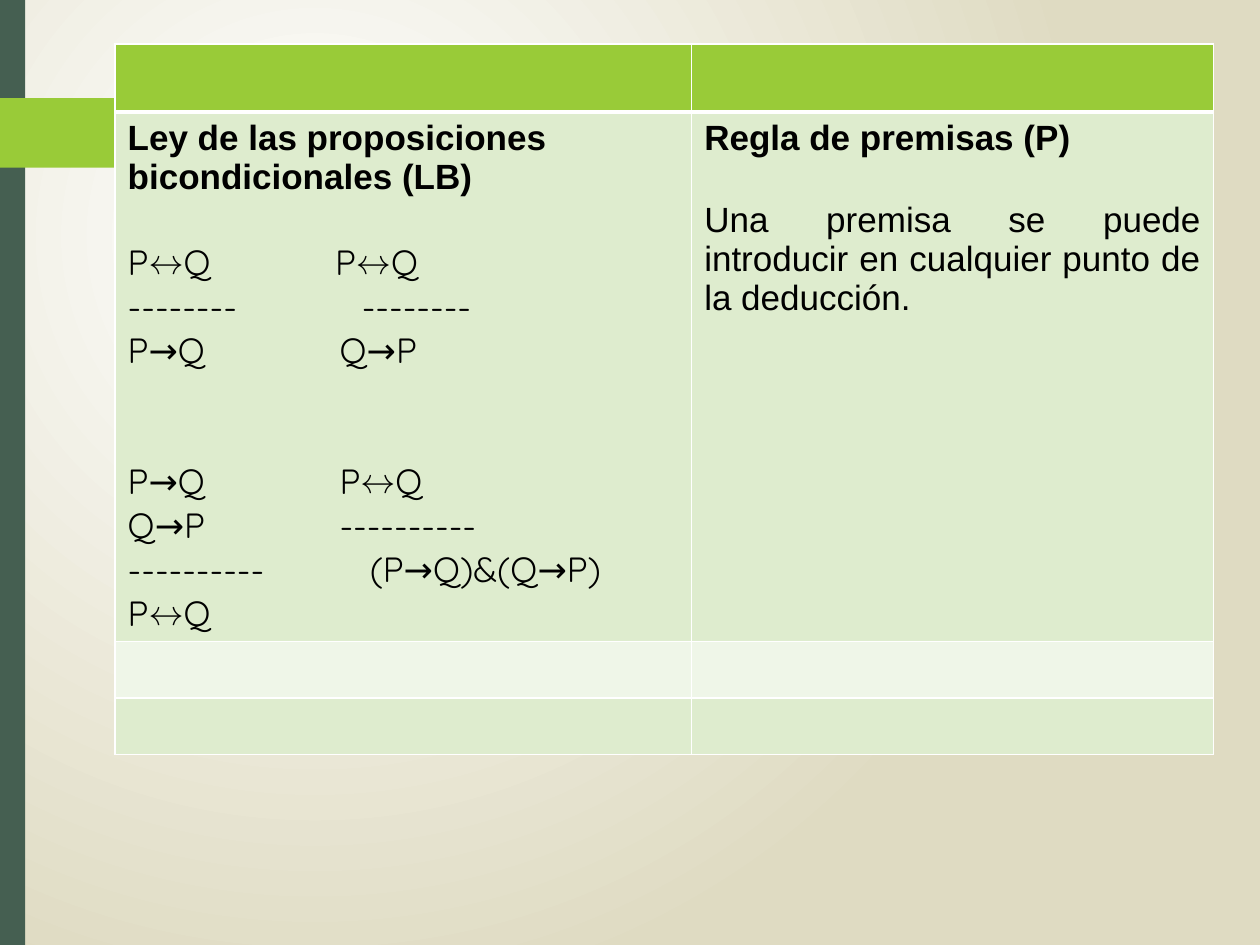
from lxml import etree
from pptx import Presentation
from pptx import util as u
from pptx.dml.color import RGBColor
from pptx.enum import shapes, text
from pptx.oxml import ns

COLORS = {
    "bar": "455F51",
    "accent": "99CB38",
    "band": "DEECCE",
    "light": "EFF6E8",
    "line": "FFFFFF",
    "text": "000000",
    "bg_center": "FFFFFF",
    "bg_edge": "DFDBC2",
}
ROW_FILLS = ["accent", "band", "light", "band"]
ROW_HEIGHTS = [1.37, 10.67, 1.14, 1.14]
COLUMN_SHARES = [0.525, 0.475]
BLANK_LINE = 25

RULES = [
    ("P↔Q\tP↔Q", 4.18, BLANK_LINE),
    ("--------\t--------", 4.72, 0),
    ("P→Q\tQ→P", 4.27, 0),
    ("P→Q\tP↔Q", 4.27, 2 * BLANK_LINE),
    ("Q→P\t----------", 4.27, 0),
    ("----------\t(P→Q)&(Q→P)", 4.88, 0),
    ("P↔Q", None, 0),
]


def rgb(name):
    return RGBColor.from_string(COLORS[name])


def add_xml(parent, tag, **attrs):
    return etree.SubElement(parent, ns.qn(tag), **attrs)


def add_text(tf, content, font="Arial", size=20, bold=False, before=0,
             align=text.PP_ALIGN.LEFT, tab=None):
    p = tf.paragraphs[0] if not tf.text else tf.add_paragraph()
    p.alignment = align
    p.space_before = u.Pt(before)
    if tab:
        tabs = add_xml(p._p.get_or_add_pPr(), "a:tabLst")
        add_xml(tabs, "a:tab", pos=str(u.Cm(tab)), algn="l")
    r = p.add_run()
    r.text = content
    r.font.name = font
    r.font.size = u.Pt(size)
    r.font.bold = bold
    r.font.color.rgb = rgb("text")


def paint(sp, color):
    sp.shadow.inherit = False
    sp.fill.solid()
    sp.fill.fore_color.rgb = rgb(color)
    sp.line.fill.background()


def set_background(s):
    fill = s.background.fill
    fill.gradient()
    for stop, color in zip(fill.gradient_stops, ("bg_center", "bg_edge")):
        stop.color.rgb = rgb(color)
    grad = s.background._cSld.find(".//" + ns.qn("a:gradFill"))
    grad.remove(grad.find(ns.qn("a:lin")))
    circle = add_xml(grad, "a:path", path="circle")
    add_xml(circle, "a:fillToRect", l="50000", t="50000", r="100000", b="100000")


def add_side_bar(s, left, top, width, height):
    bar = s.shapes.add_shape(shapes.MSO_SHAPE.RECTANGLE,
                             u.Cm(left), u.Cm(top), u.Cm(width), u.Cm(height))
    paint(bar, "bar")


def add_arrow_tab(s, left, top, width, height):
    outline = [(0, 0), (0.81, 0), (0.83, 0.02), (1, 0.48),
               (1, 0.52), (0.83, 0.98), (0.81, 1), (0, 1)]
    points = [(u.Cm(left + x * width), u.Cm(top + y * height)) for x, y in outline]
    builder = s.shapes.build_freeform(*points[0])
    builder.add_line_segments(points[1:], close=True)
    paint(builder.convert_to_shape(), "accent")


def set_borders(cell, top=1, bottom=1):
    tc_pr = cell._tc.get_or_add_tcPr()
    for side, width in (("L", 1), ("R", 1), ("T", top), ("B", bottom)):
        ln = add_xml(tc_pr, "a:ln" + side, w=str(u.Pt(width)))
        add_xml(add_xml(ln, "a:solidFill"), "a:srgbClr", val=COLORS["line"])


def add_rules_table(s, left, top, width):
    frame = s.shapes.add_table(len(ROW_HEIGHTS), len(COLUMN_SHARES), u.Cm(left),
                               u.Cm(top), u.Cm(width), u.Cm(sum(ROW_HEIGHTS)))
    table = frame.table
    for column, share in zip(table.columns, COLUMN_SHARES):
        column.width = u.Cm(width * share)
    for i, (row, height, color) in enumerate(zip(table.rows, ROW_HEIGHTS, ROW_FILLS)):
        row.height = u.Cm(height)
        for cell in row.cells:
            set_borders(cell, top=3 if i == 1 else 1, bottom=3 if i == 0 else 1)
            cell.fill.solid()
            cell.fill.fore_color.rgb = rgb(color)

    laws = table.cell(1, 0).text_frame
    add_text(laws, "Ley de las proposiciones bicondicionales (LB)", bold=True)
    for content, tab, before in RULES:
        add_text(laws, content, font="Quicksand", tab=tab, before=before)

    premises = table.cell(1, 1).text_frame
    add_text(premises, "Regla de premisas (P)", bold=True)
    add_text(premises,
             "Una premisa se puede introducir en cualquier punto de la deducción.",
             before=BLANK_LINE, align=text.PP_ALIGN.JUSTIFY)


def main():
    prs = Presentation()
    prs.slide_width, prs.slide_height = u.Cm(25.4), u.Cm(19.05)
    s = prs.slides.add_slide(prs.slide_layouts[6])
    set_background(s)
    add_side_bar(s, 0, 0, 0.51, 19.05)
    add_arrow_tab(s, 0, 1.98, 3.8, 1.4)
    add_rules_table(s, 2.32, 0.89, 22.14)
    prs.save("out.pptx")


if __name__ == "__main__":
    main()
